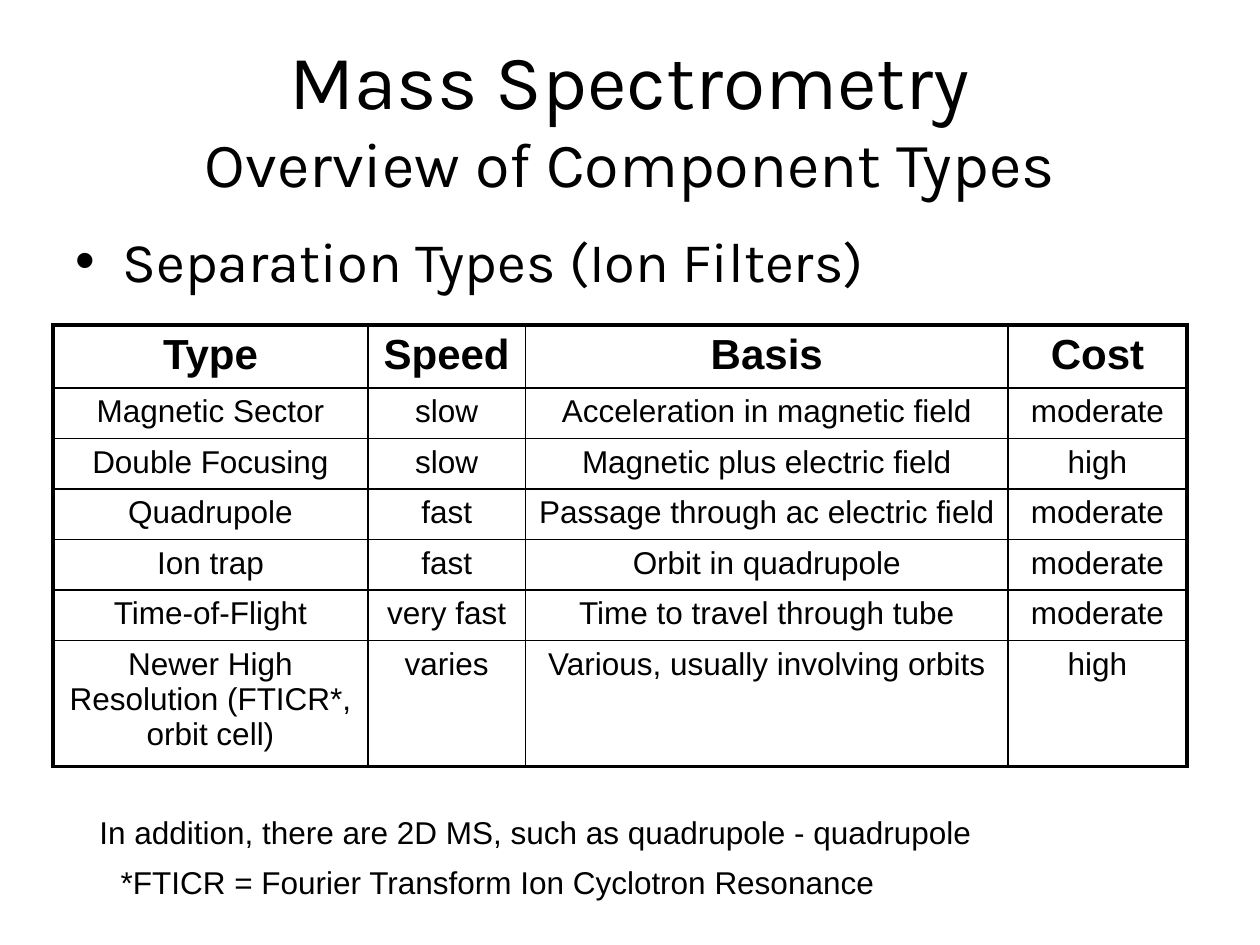
from lxml import etree
from pptx import Presentation
from pptx.dml.color import RGBColor
from pptx.enum.text import MSO_ANCHOR, PP_ALIGN
from pptx.oxml.ns import qn
from pptx.util import Pt

CENTER, LEFT = PP_ALIGN.CENTER, PP_ALIGN.LEFT
TOP, MIDDLE = MSO_ANCHOR.TOP, MSO_ANCHOR.MIDDLE
BLACK = "000000"
THIN, THICK = 1, 2.25
COLS = [180, 90, 275.76, 102.24]
HEIGHTS = [36] + [28.8] * 5 + [50.4]
ROWS = [
    ["Type", "Speed", "Basis", "Cost"],
    ["Magnetic Sector", "slow", "Acceleration in magnetic field", "moderate"],
    ["Double Focusing", "slow", "Magnetic plus electric field", "high"],
    ["Quadrupole", "fast", "Passage through ac electric field", "moderate"],
    ["Ion trap", "fast", "Orbit in quadrupole", "moderate"],
    ["Time-of-Flight", "very fast", "Time to travel through tube", "moderate"],
    ["Newer High Resolution (FTICR*, orbit cell)", "varies",
     "Various, usually involving orbits", "high"],
]
NOTES = [
    (0, "In addition, there are 2D MS, such as quadrupole - quadrupole"),
    (12.24, "*FTICR = Fourier Transform Ion Cyclotron Resonance"),
]


def color(value):
    return RGBColor.from_string(value)


def add_run(p, text, **fmt):
    r = p.add_run()
    r.text = text
    for name, value in fmt.items():
        setattr(r.font, name, value)
    r.font.color.rgb = color(BLACK)


def add_box(s, box, anchor=TOP, align=LEFT):
    tf = s.shapes.add_textbox(*map(Pt, box)).text_frame
    tf.word_wrap = True
    tf.vertical_anchor = anchor
    p = tf.paragraphs[0]
    p.alignment = align
    return p


def add_title(s, box):
    p = add_box(s, box, MIDDLE, CENTER)
    add_run(p, "Mass Spectrometry", name="Karla", size=Pt(44))
    p.add_line_break()
    add_run(p, "Overview of Component Types", name="Karla", size=Pt(36))


def add_bullet(s, box):
    p = add_box(s, box)
    p.space_before = Pt(3)
    add_run(p, "Separation Types (Ion Filters)", name="Karla", size=Pt(32))
    pPr = p._p.get_or_add_pPr()
    pPr.set("marL", str(Pt(27)))
    pPr.set("indent", str(Pt(-27)))
    etree.SubElement(pPr, qn("a:buFont")).set("typeface", "Arial")
    etree.SubElement(pPr, qn("a:buChar")).set("char", "•")


def set_borders(cell, widths):
    tcPr = cell._tc.get_or_add_tcPr()
    for i, (side, width) in enumerate(widths.items()):
        ln = etree.Element(qn(f"a:ln{side}"), w=str(Pt(width)))
        fill = etree.SubElement(ln, qn("a:solidFill"))
        etree.SubElement(fill, qn("a:srgbClr")).set("val", BLACK)
        tcPr.insert(i, ln)


def add_types_table(s, box):
    last_row, last_col = len(ROWS) - 1, len(COLS) - 1
    table = s.shapes.add_table(len(ROWS), len(COLS), *map(Pt, box)).table
    for col, width in zip(table.columns, COLS):
        col.width = Pt(width)
    for i, (row, height) in enumerate(zip(table.rows, HEIGHTS)):
        row.height = Pt(height)
        for j, cell in enumerate(row.cells):
            cell.fill.background()
            p = cell.text_frame.paragraphs[0]
            p.alignment = CENTER
            add_run(p, ROWS[i][j], name="Arial",
                    size=Pt(18 if i else 24), bold=i == 0)
            set_borders(cell, {
                "L": THIN if j else THICK,
                "R": THICK if j == last_col else THIN,
                "T": THIN if i else THICK,
                "B": THICK if i == last_row else THIN,
            })


def add_notes(s, box):
    left, top, width, height = box
    step = height / len(NOTES)
    for i, (indent, text) in enumerate(NOTES):
        p = add_box(s, (left + indent, top + i * step, width, step))
        add_run(p, text, name="Arial", size=Pt(18))


def main():
    prs = Presentation()
    prs.slide_width, prs.slide_height = Pt(720), Pt(540)
    s = prs.slides.add_slide(prs.slide_layouts[6])
    add_title(s, (36, 21.6, 648, 90))
    add_bullet(s, (36, 126, 648, 356.4))
    add_types_table(s, (30.24, 185.76, sum(COLS), sum(HEIGHTS)))
    add_notes(s, (49.68, 460.8, 522, 57.6))
    prs.save("out.pptx")


if __name__ == "__main__":
    main()
